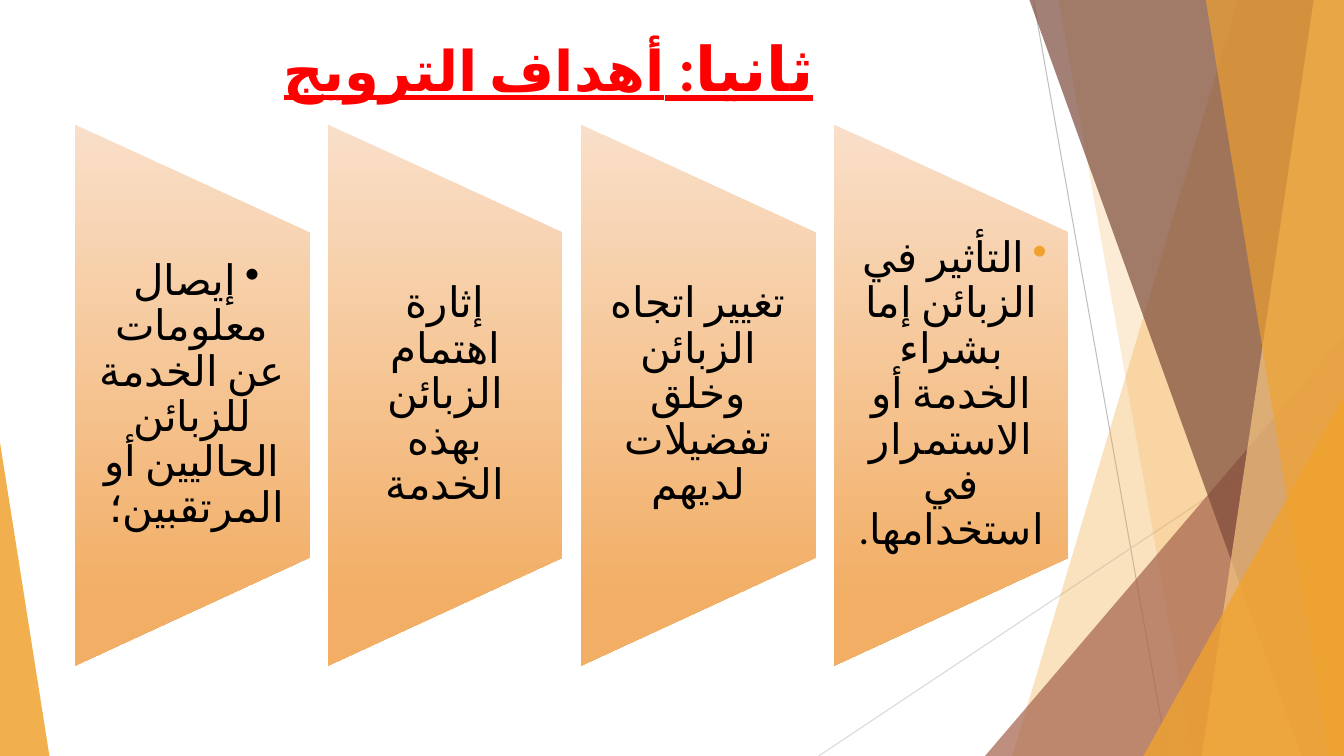
from lxml.etree import SubElement
from pptx import Presentation
from pptx.dml.color import RGBColor
from pptx.enum.lang import MSO_LANGUAGE_ID as Language
from pptx.enum.shapes import MSO_CONNECTOR, MSO_SHAPE as Preset
from pptx.enum.text import MSO_ANCHOR as Anchor, MSO_AUTO_SIZE as AutoSize, PP_ALIGN as Align
from pptx.oxml.ns import qn
from pptx.util import Inches, Pt

ORANGE = RGBColor(0xF0, 0xA2, 0x2E)
PALE_ORANGE = RGBColor(0xF6, 0xC7, 0x82)
RUST = RGBColor(0xA5, 0x64, 0x4E)
BROWN = RGBColor(0x7C, 0x4B, 0x3B)
GREY = RGBColor(0xBF, 0xBF, 0xBF)
LIGHT_GREY = RGBColor(0xD9, 0xD9, 0xD9)
PEACH = RGBColor(0xF9, 0xDF, 0xC9)
APRICOT = RGBColor(0xF2, 0xAE, 0x65)
RED = RGBColor(0xFF, 0, 0)
BLACK = RGBColor(0, 0, 0)

WIDTH, HEIGHT = 13.33, 7.5


class SlideBuilder:
    font_name = "Calibri"
    language = Language.ARABIC_ALGERIA

    def __init__(self, slide):
        self.slide = slide
        self.shapes = slide.shapes

    def line(self, start, end, color):
        points = [Inches(value) for value in (*start, *end)]
        connector = self.shapes.add_connector(MSO_CONNECTOR.STRAIGHT, *points)
        connector.line.color.rgb = color
        connector.line.width = Pt(0.75)
        SubElement(connector._element.spPr, qn("a:effectLst"))

    def tint(self, shape, color, opacity):
        shape.shadow.inherit = False
        shape.line.fill.background()
        shape.fill.solid()
        shape.fill.fore_color.rgb = color
        color_element = shape._element.spPr.find(qn("a:solidFill"))[0]
        SubElement(color_element, qn("a:alpha"), val=str(opacity * 1000))

    def band(self, points, color, opacity):
        corners = [(Inches(x), Inches(y)) for x, y in points]
        builder = self.shapes.build_freeform(*corners[0], scale=1.0)
        builder.add_line_segments(corners[1:], close=True)
        self.tint(builder.convert_to_shape(), color, opacity)

    def triangle(self, box, apex, color, opacity):
        shape = self.shapes.add_shape(Preset.ISOSCELES_TRIANGLE, *map(Inches, box))
        shape.adjustments[0] = apex
        self.tint(shape, color, opacity)

    def panel(self, center_x, center_y, length, thickness):
        shape = self.shapes.add_shape(
            Preset.FLOWCHART_MANUAL_OPERATION,
            Inches(center_x - length / 2), Inches(center_y - thickness / 2),
            Inches(length), Inches(thickness))
        shape.rotation = 270
        shape.shadow.inherit = False
        shape.line.fill.background()
        shape.fill.gradient()
        shape.fill.gradient_angle = 270
        stops = shape.fill.gradient_stops
        for stop, position, color in zip(stops, (0, 0.88), (PEACH, APRICOT)):
            stop.position = position
            stop.color.rgb = color
        # Keep the gradient vertical although the panel is turned
        shape._element.spPr.find(qn("a:gradFill")).set("rotWithShape", "0")

    def frame(self, text_frame, anchor, margins):
        left, top, right, bottom = map(Inches, margins)
        settings = dict(word_wrap=True, auto_size=AutoSize.NONE, vertical_anchor=anchor,
                        margin_left=left, margin_top=top,
                        margin_right=right, margin_bottom=bottom)
        for name, value in settings.items():
            setattr(text_frame, name, value)

    def paragraph(self, paragraph, spacing, rtl):
        settings = dict(alignment=Align.CENTER, line_spacing=spacing,
                        space_before=Pt(0), space_after=Pt(0))
        for name, value in settings.items():
            setattr(paragraph, name, value)
        properties = paragraph._p.get_or_add_pPr()
        properties.set("rtl", "1" if rtl else "0")
        return properties

    def run(self, paragraph, text, color, size, **settings):
        run = paragraph.add_run()
        run.text = text
        run.font.color.rgb = color
        settings.update(name=self.font_name, size=Pt(size), language_id=self.language)
        for name, value in settings.items():
            setattr(run.font, name, value)
        SubElement(run._r.get_or_add_rPr(), qn("a:cs"), typeface=self.font_name)

    def title(self, box, parts):
        title = self.shapes.title
        for name, value in zip(("left", "top", "width", "height"), box):
            setattr(title, name, Inches(value))
        self.frame(title.text_frame, Anchor.TOP, (0.1, 0.05, 0.1, 0.05))
        paragraph = title.text_frame.paragraphs[0]
        self.paragraph(paragraph, 1.07, True)
        for text, size in parts:
            self.run(paragraph, text, RED, size, bold=True, underline=True)

    def caption(self, box, text, rtl, bullet_color):
        text_frame = self.shapes.add_textbox(*map(Inches, box)).text_frame
        self.frame(text_frame, Anchor.MIDDLE, (0.21, 0, 0.21, 0))
        paragraph = text_frame.paragraphs[0]
        properties = self.paragraph(paragraph, 0.9, rtl)
        if bullet_color is not None:
            color_element = SubElement(properties, qn("a:buClr"))
            SubElement(color_element, qn("a:srgbClr"), val=str(bullet_color))
            SubElement(properties, qn("a:buChar"), char="•")
        self.run(paragraph, text, BLACK, 30)


def main():
    presentation = Presentation()
    presentation.slide_width = Inches(WIDTH)
    presentation.slide_height = Inches(HEIGHT)
    slide = presentation.slides.add_slide(presentation.slide_layouts[5])
    builder = SlideBuilder(slide)

    # Background facets
    builder.line((10.25, 0), (11.58, HEIGHT), GREY)
    builder.line((WIDTH, 4.03), (8.12, HEIGHT), LIGHT_GREY)

    def right_band(top_x, bottom_x, color, opacity):
        corners = [(top_x, 0), (WIDTH, 0), (WIDTH, HEIGHT), (bottom_x, HEIGHT)]
        builder.band(corners, color, opacity)

    right_band(12.28, 10.04, ORANGE, 30)
    right_band(10.5, 11.83, ORANGE, 20)
    builder.triangle((9.77, 3.33, 3.56, 4.17), 1, RUST, 72)
    right_band(10.21, 12.91, BROWN, 70)
    right_band(13.03, 11.92, PALE_ORANGE, 70)
    right_band(11.96, 13.18, ORANGE, 65)
    builder.triangle((11.34, 3.93, 1.99, 3.57), 1, ORANGE, 80)
    builder.triangle((0, 4.39, 0.49, 3.11), 0, ORANGE, 85)

    # Title
    builder.title((0.74, 0.2, 9.4, 0.95), [("ثانيا: ", 44), ("أهداف الترويج", 40)])

    # Goal panels, from left to right: text, right-to-left, bullet colour
    goals = [
        ("إيصال معلومات عن الخدمة للزبائن الحاليين أو المرتقبين؛ ", True, BLACK),
        ("إثارة اهتمام الزبائن بهذه الخدمة", False, None),
        ("تغيير اتجاه الزبائن وخلق تفضيلات لديهم", True, None),
        ("التأثير في الزبائن إما بشراء الخدمة أو الاستمرار في استخدامها. ", True, ORANGE),
    ]
    panel_width, panel_height, text_height = 2.33, 5.37, 3.22
    first_left, pitch, center_y = 0.74, 2.51, 3.92
    for index, goal in enumerate(goals):
        left = first_left + index * pitch
        builder.panel(left + panel_width / 2, center_y, panel_height, panel_width)
        text_top = center_y - text_height / 2
        builder.caption((left, text_top, panel_width, text_height), *goal)

    presentation.save("out.pptx")


if __name__ == "__main__":
    main()
